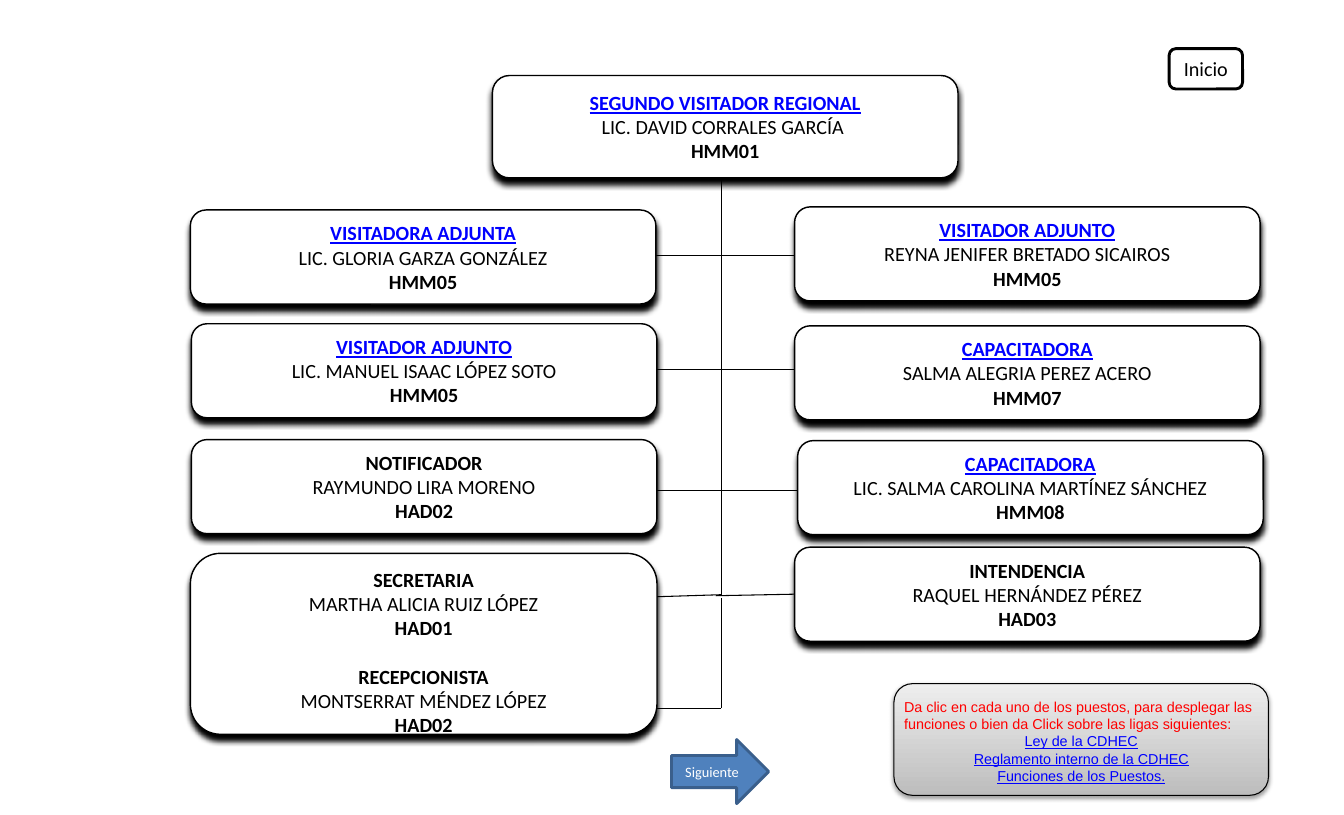
import pptx
import pptx.util
import pptx.dml.color
import pptx.enum.shapes
import pptx.enum.text
import pptx.oxml

SHAPE = pptx.enum.shapes.MSO_SHAPE
ALIGN = pptx.enum.text.PP_ALIGN
MIDDLE = pptx.enum.text.MSO_ANCHOR.MIDDLE
NS = 'xmlns:a="http://schemas.openxmlformats.org/drawingml/2006/main"'
BLACK, WHITE, BLUE, RED = "000000", "FFFFFF", "0000FF", "FF0000"
EMU_PER_PX = 9144
TRUNK_X = 697
CARD_W, CARD_H = 450, 91


def px(n):
    return pptx.util.Emu(n * EMU_PER_PX)


def rgb(hex_string):
    return pptx.dml.color.RGBColor.from_string(hex_string)


def format_text(p, size, font, color, bold=False, underline=False):
    for r in p.runs:
        r.font.size = pptx.util.Pt(size)
        r.font.name = font
        r.font.color.rgb = rgb(color)
        r.font.bold = bold
        r.font.underline = underline


def add_shadow(sp, alpha, blur, dist):
    effects = sp._element.spPr.find(pptx.oxml.ns.qn("a:effectLst"))
    effects.append(pptx.oxml.parse_xml(
        f'<a:outerShdw {NS} blurRad="{pptx.util.Pt(blur)}" dist="{pptx.util.Pt(dist)}" '
        f'dir="5400000" rotWithShape="0"><a:srgbClr val="{BLACK}">'
        f'<a:alpha val="{alpha * 1000}"/></a:srgbClr></a:outerShdw>'))


def add_box(slide, kind, x, y, w, h, fill, line, width):
    sp = slide.shapes.add_shape(kind, px(x), px(y), px(w), px(h))
    sp.shadow.inherit = False
    if fill:
        sp.fill.solid()
        sp.fill.fore_color.rgb = rgb(fill)
    sp.line.color.rgb = rgb(line)
    sp.line.width = pptx.util.Pt(width)
    return sp


def add_line(slide, x1, y1, x2, y2):
    line = slide.shapes.add_connector(
        pptx.enum.shapes.MSO_CONNECTOR.STRAIGHT, px(x1), px(y1), px(x2), px(y2))
    line.line.color.rgb = rgb(BLACK)
    line.line.width = pptx.util.Pt(0.75)
    line._element.spPr.append(pptx.oxml.parse_xml(f"<a:effectLst {NS}/>"))
    return line


def add_card(slide, x, y, w, h, posts, color=BLUE, top=9):
    sp = add_box(slide, SHAPE.ROUNDED_RECTANGLE, x, y, w, h, WHITE, BLACK, 1)
    add_shadow(sp, 100, 4, 4)
    tf = sp.text_frame
    tf.word_wrap = False
    tf.vertical_anchor = MIDDLE
    tf.margin_left = tf.margin_right = px(17)
    tf.margin_top, tf.margin_bottom = px(top), px(9)
    tf.text = "\n".join(line for post in posts for line in post)
    for i, p in enumerate(tf.paragraphs):
        p.alignment = ALIGN.CENTER
        role = i % 3 == 0
        format_text(p, 14, "Calibri", color if role else BLACK,
                    bold=i % 3 != 1, underline=role and color == BLUE)
        if role and i:
            p.space_before = pptx.util.Pt(17)
    return sp


def add_button(slide, kind, x, y, w, h, label, size, color, fill, line):
    sp = add_box(slide, kind, x, y, w, h, fill, line, 2)
    tf = sp.text_frame
    tf.text = label
    tf.vertical_anchor = MIDDLE
    p = tf.paragraphs[0]
    p.alignment = ALIGN.CENTER
    format_text(p, size, "Calibri", color)


def add_note(slide, x, y, w, h, intro, links):
    panel = add_box(slide, SHAPE.ROUNDED_RECTANGLE, x, y, w, h, None, BLACK, 0.75)
    panel.fill.gradient()
    panel.fill.gradient_angle = 90
    for stop, color in zip(panel.fill.gradient_stops, ("BDBDBD", "EEEEEE")):
        stop.color.rgb = rgb(color)
    add_shadow(panel, 38, 3.1, 1.6)
    tf = slide.shapes.add_textbox(px(x), px(y + 9), px(w), px(h - 14)).text_frame
    tf.word_wrap = True
    tf.text = "\n".join([intro] + links)
    format_text(tf.paragraphs[0], 10, "Arial", RED)
    for p in tf.paragraphs[1:]:
        p.alignment = ALIGN.CENTER
        format_text(p, 10, "Arial", BLUE, underline=True)


def add_chart_lines(slide):
    add_line(slide, TRUNK_X, 108, TRUNK_X, 576)
    add_line(slide, TRUNK_X, 578, TRUNK_X, 685)
    add_line(slide, TRUNK_X, 685, 563, 685)
    add_line(slide, 602, 578, TRUNK_X, 575)
    for x, y in ((579, 247), (587, 357), (585, 474)):
        add_line(slide, x, y, x + 230, y)


def add_staff(slide):
    add_card(slide, 476, 73, CARD_W, 99,
             [("SEGUNDO VISITADOR REGIONAL", "LIC. DAVID CORRALES GARCÍA ", "HMM01")])
    cards = [
        (184, 203, BLUE, ("VISITADORA ADJUNTA", "LIC. GLORIA GARZA GONZÁLEZ", "HMM05")),
        (185, 313, BLUE, ("VISITADOR ADJUNTO", "LIC. MANUEL ISAAC LÓPEZ SOTO", "HMM05")),
        (185, 425, BLACK, ("NOTIFICADOR", "RAYMUNDO LIRA MORENO", "HAD02")),
        (768, 200, BLUE, ("VISITADOR ADJUNTO", "REYNA JENIFER BRETADO SICAIROS", "HMM05")),
        (768, 315, BLUE, ("CAPACITADORA", "SALMA ALEGRIA PEREZ ACERO", "HMM07")),
        (771, 426, BLUE, ("CAPACITADORA", "LIC. SALMA CAROLINA MARTÍNEZ SÁNCHEZ", "HMM08")),
    ]
    for x, y, color, post in cards:
        add_card(slide, x, y, CARD_W, CARD_H, [post], color)
    add_card(slide, 184, 535, 451, 175,
             [("SECRETARIA", "MARTHA ALICIA RUIZ LÓPEZ", "HAD01"),
              ("RECEPCIONISTA", "MONTSERRAT MÉNDEZ LÓPEZ", "HAD02")], BLACK, top=25)
    cleaning = add_card(slide, 768, 529, CARD_W, CARD_H,
                        [("INTENDENCIA", "RAQUEL HERNÁNDEZ PÉREZ", "HAD03")], BLACK)
    add_line(slide, 692, 576, 768, 575).end_connect(cleaning, 1)


def main():
    prs = pptx.Presentation()
    prs.slide_width, prs.slide_height = px(1299), px(788)
    slide = prs.slides.add_slide(prs.slide_layouts[6])
    add_chart_lines(slide)
    add_staff(slide)
    add_button(slide, SHAPE.ROUNDED_RECTANGLE, 1130, 47, 71, 39,
               "Inicio", 14, BLACK, WHITE, BLACK)
    add_note(slide, 864, 661, 362, 108,
             "Da clic en cada uno de los puestos, para desplegar las funciones "
             "o bien da Click sobre las ligas siguientes:",
             ["Ley de la CDHEC", "Reglamento interno de la CDHEC",
              "Funciones de los Puestos."])
    add_button(slide, SHAPE.RIGHT_ARROW, 649, 715, 94, 62,
               "Siguiente", 10, WHITE, "4F81BD", "3A5F8C")
    prs.save("out.pptx")


if __name__ == "__main__":
    main()
